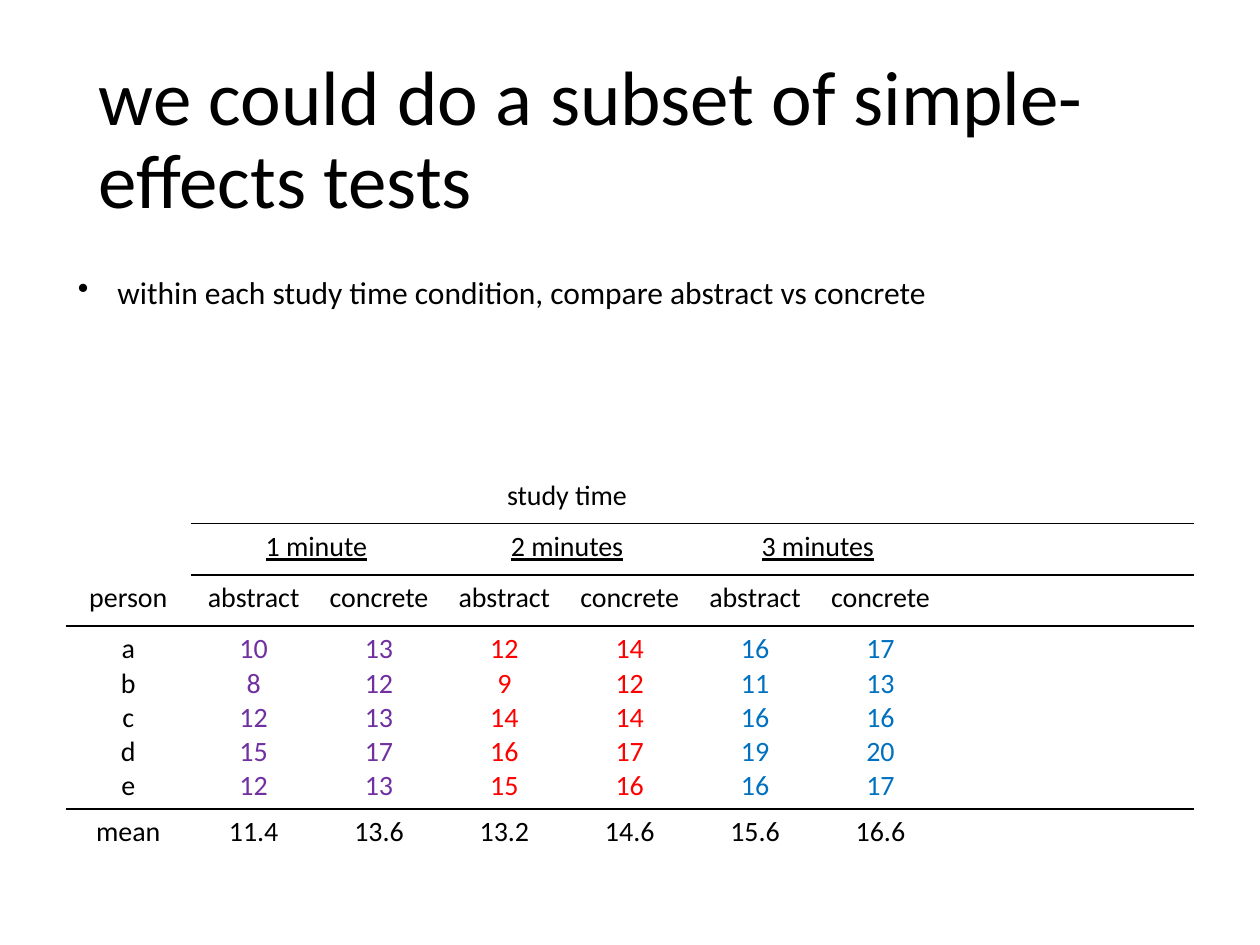
import pptx
import pptx.dml.color
import pptx.enum.text
import pptx.oxml
import pptx.oxml.ns
import pptx.util
from pptx.util import Pt

FONT = "Calibri"
BLACK = "000000"
NO_STYLE = "{2D5ABB26-0587-4C30-8999-92F81FD0307C}"
TABLE_LEFT, TABLE_TOP, COLUMN_WIDTH = 37.5, 270, 71.65
ROW_HEIGHTS = [29.25, 29.25, 29.25, 104.5, 29.25]
HEADINGS, DATA, MEANS = 2, 3, 4

PERSONS = ["a", "b", "c", "d", "e"]
# study time, colour, abstract scores, concrete scores
CONDITIONS = [
    ("1 minute", "7030A0", [10, 8, 12, 15, 12], [13, 12, 13, 17, 13]),
    ("2 minutes", "FF0000", [12, 9, 14, 16, 15], [14, 12, 14, 17, 16]),
    ("3 minutes", "0070C0", [16, 11, 16, 19, 16], [17, 13, 16, 20, 17]),
]


def rgb(color):
    return pptx.dml.color.RGBColor.from_string(color)


def write_text(frame, text, size=16, color=BLACK, align="LEFT", underline=None, line_spacing=None):
    """Fill a text frame, one paragraph for each line of text."""
    for index, line in enumerate(text.split("\n")):
        paragraph = frame.paragraphs[0] if index == 0 else frame.add_paragraph()
        paragraph.alignment = pptx.enum.text.PP_ALIGN[align]
        paragraph.line_spacing = line_spacing
        run = paragraph.add_run()
        run.text = line
        run.font.name = FONT
        run.font.size = Pt(size)
        run.font.underline = underline
        run.font.color.rgb = rgb(color)


def add_text(slide, text, left, top, width, height, anchor="TOP", **text_format):
    shape = slide.shapes.add_textbox(Pt(left), Pt(top), Pt(width), Pt(height))
    frame = shape.text_frame
    frame.word_wrap = True
    frame.vertical_anchor = pptx.enum.text.MSO_ANCHOR[anchor]
    write_text(frame, text, **text_format)
    return shape


def add_bullet(paragraph, indent):
    properties = paragraph._p.get_or_add_pPr()
    properties.set("marL", str(Pt(indent)))
    properties.set("indent", str(-Pt(indent)))
    bullet = pptx.oxml.parse_xml(f'<a:buChar {pptx.oxml.ns.nsdecls("a")} char="•"/>')
    properties.append(bullet)


def set_border(cell, side, width=1, color=BLACK):
    """Draw one edge of a cell; side is T or B."""
    border = pptx.oxml.parse_xml(
        f'<a:ln{side} {pptx.oxml.ns.nsdecls("a")} w="{Pt(width)}">'
        f'<a:solidFill><a:srgbClr val="{color}"/></a:solidFill></a:ln{side}>')
    cell._tc.get_or_add_tcPr().append(border)


def write_cell(table, row, column, text, span=1, **text_format):
    cell = table.cell(row, column)
    if span > 1:
        cell.merge(table.cell(row, column + span - 1))
    write_text(cell.text_frame, text, align="CENTER", **text_format)


def add_empty_table(slide, column_count):
    frame = slide.shapes.add_table(
        len(ROW_HEIGHTS), column_count, Pt(TABLE_LEFT), Pt(TABLE_TOP),
        Pt(COLUMN_WIDTH * column_count), Pt(sum(ROW_HEIGHTS)))
    table = frame.table
    table._tbl.tblPr.find(pptx.oxml.ns.qn("a:tableStyleId")).text = NO_STYLE
    table.first_row = table.horz_banding = False
    for column in table.columns:
        column.width = Pt(COLUMN_WIDTH)
    for row, height in zip(table.rows, ROW_HEIGHTS):
        row.height = Pt(height)
    return table


def add_score_table(slide):
    column_count = 9
    table = add_empty_table(slide, column_count)
    for row in range(len(ROW_HEIGHTS)):
        for column in range(column_count):
            cell = table.cell(row, column)
            if row >= DATA or (row == 1 and column > 0):
                set_border(cell, "T")
            if row in (HEADINGS, DATA) or (row == 0 and column > 0):
                set_border(cell, "B")
            cell.fill.background()

    write_cell(table, 0, 1, "study time", span=6)
    write_cell(table, HEADINGS, 0, "person")
    write_cell(table, DATA, 0, "\n".join(PERSONS))
    write_cell(table, MEANS, 0, "mean")
    for index, (minutes, color, *score_lists) in enumerate(CONDITIONS):
        first = 1 + 2 * index
        write_cell(table, 1, first, minutes, span=2, underline=True)
        for column, (word_type, scores) in enumerate(
                zip(("abstract", "concrete"), score_lists), start=first):
            write_cell(table, HEADINGS, column, word_type)
            write_cell(table, DATA, column, "\n".join(map(str, scores)), color=color)
            write_cell(table, MEANS, column, f"{sum(scores) / len(scores):.1f}")
    for row in (HEADINGS, DATA):
        table.cell(row, 7).merge(table.cell(row, 8))


def main():
    presentation = pptx.Presentation()
    presentation.slide_width, presentation.slide_height = Pt(720), Pt(540)
    slide = presentation.slides.add_slide(presentation.slide_layouts[6])

    add_text(slide, "we could do a subset of simple-effects tests", 49.5, 28.75, 621, 104.5,
             anchor="MIDDLE", size=44, line_spacing=0.9)
    add_score_table(slide)
    point = add_text(slide, "within each study time condition, compare abstract vs concrete",
                     37.5, 152.5, 645, 29, size=18)
    add_bullet(point.text_frame.paragraphs[0], indent=22.5)

    presentation.save("out.pptx")


if __name__ == "__main__":
    main()
